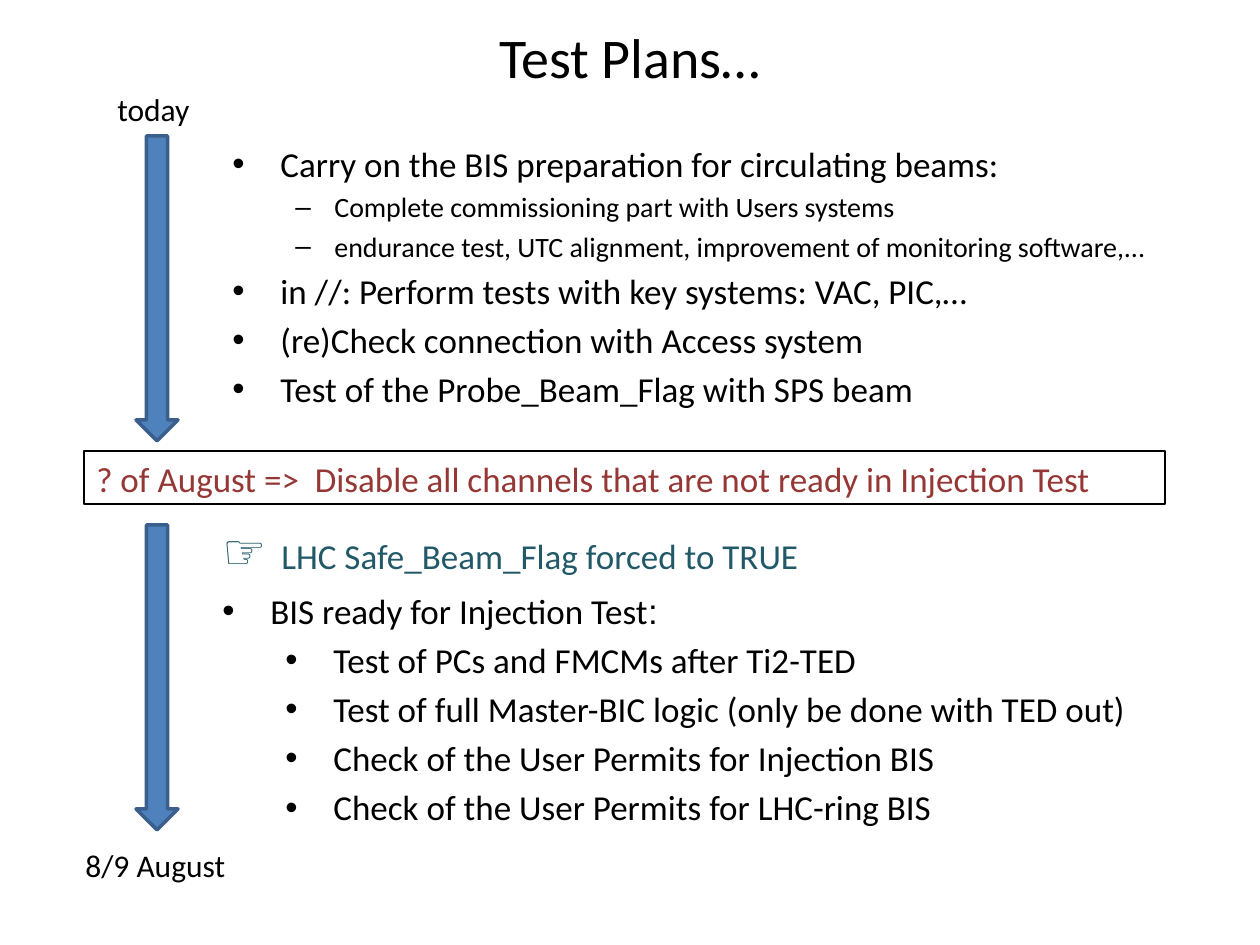
"""Build the Test Plans slide: a timeline of arrows beside two task lists."""
from dataclasses import dataclass

from lxml.etree import SubElement
from pptx import Presentation
from pptx.dml.color import RGBColor
from pptx.enum.shapes import MSO_SHAPE as Shape
from pptx.enum.text import MSO_ANCHOR as Anchor, PP_ALIGN as Align
from pptx.oxml.ns import qn
from pptx.util import Emu, Pt

COLORS = {
    "text": "000000", "arrow": "4F81BD", "arrow_edge": "3A5F8C",
    "border": "000000", "warning": "953735", "flag": "215968",
}


@dataclass(frozen=True)
class Run:
    text: str
    size: int = 20
    color: str = "text"
    font: str = "Calibri"


@dataclass(frozen=True)
class Para:
    runs: tuple[Run, ...]
    bullet: str = ""
    level: int = 0
    left: int = 0
    hang: int = 0
    before: float = 0
    spacing: float = 1.0
    align: Align = Align.LEFT


@dataclass(frozen=True)
class Block:
    box: tuple[int, int, int, int]
    paras: tuple[Para, ...]
    anchor: Anchor = Anchor.TOP
    border: str = ""


def px(v: int) -> Emu:
    """Turn pixels into EMU."""
    return Emu(round(v * 914400 / 126))


def rgb(name: str) -> RGBColor:
    """Look up a named colour."""
    return RGBColor.from_string(COLORS[name])


def label(text: str, size: int = 18, align: Align = Align.LEFT) -> Para:
    """Make a plain line."""
    return Para((Run(text, size),), align=align)


def hanging(*runs: Run, left: int = 48) -> Para:
    """Make an unbulleted line with a hanging indent."""
    return Para(runs, left=left, hang=left, before=runs[0].size / 5)


def item(*runs: Run, spacing: float = 1.0) -> Para:
    """Make a first-level bullet."""
    return Para(runs, "•", 0, 48, 48, 4, spacing)


def dash(text: str) -> Para:
    """Make a small dashed sub-item."""
    return Para((Run(text, 16),), "–", 1, 102, 39, 3.2)


def subitem(text: str) -> Para:
    """Make a second-level bullet."""
    return Para((Run(text),), "•", 1, 111, 48, 4)


def add_block(s, block: Block) -> None:
    """Draw a text block, framed if it has a border colour."""
    box = [px(v) for v in block.box]
    if block.border:
        sp = s.shapes.add_shape(Shape.RECTANGLE, *box)
        sp.shadow.inherit = False
        sp.fill.background()
        sp.line.color.rgb = rgb(block.border)
        sp.line.width = Pt(0.75)
    else:
        sp = s.shapes.add_textbox(*box)
    tf = sp.text_frame
    tf.word_wrap = True
    tf.vertical_anchor = block.anchor
    for i, para in enumerate(block.paras):
        p = tf.add_paragraph() if i else tf.paragraphs[0]
        p.alignment, p.level = para.align, para.level
        p.space_before, p.line_spacing = Pt(para.before), para.spacing
        pPr = p._p.get_or_add_pPr()
        pPr.set("marL", str(px(para.left)))
        pPr.set("indent", str(px(-para.hang)))
        if para.bullet:
            SubElement(pPr, qn("a:buFont"), typeface="Arial")
            SubElement(pPr, qn("a:buChar"), char=para.bullet)
        for run in para.runs:
            r = p.add_run()
            r.text = run.text
            r.font.size, r.font.name = Pt(run.size), run.font
            r.font.color.rgb = rgb(run.color)


def add_arrow(s, top: int) -> None:
    """Draw one timeline arrow."""
    sp = s.shapes.add_shape(Shape.DOWN_ARROW, px(136), px(top), px(42), px(305))
    sp.shadow.inherit = False
    sp.fill.solid()
    sp.fill.fore_color.rgb = rgb("arrow")
    sp.line.color.rgb = rgb("arrow_edge")
    sp.line.width = Pt(2)


BLOCKS = (
    Block((63, 28, 1134, 57), (label("Test Plans…", 32, Align.CENTER),), Anchor.MIDDLE),
    Block((220, 136, 977, 294), (
        item(Run("Carry on the BIS preparation for circulating beams:")),
        dash("Complete commissioning part with Users systems"),
        dash("endurance test, UTC alignment, improvement of monitoring software,..."),
        item(Run("in //: Perform tests with key systems: VAC, PIC,…")),
        item(Run("(re)Check connection with Access system")),
        item(Run("Test of the Probe_Beam_Flag with SPS beam")),
    )),
    Block((105, 84, 116, 53), (label("today"),)),
    Block((73, 840, 179, 50), (label("8/9 August"),)),
    Block((210, 588, 977, 252), (
        item(Run("BIS ready for Injection Test"), Run(":", font="Arial"), spacing=0.9),
        subitem("Test of PCs and FMCMs after Ti2-TED"),
        subitem("Test of full Master-BIC logic (only be done with TED out)"),
        subitem("Check of the User Permits for Injection BIS"),
        subitem("Check of the User Permits for LHC-ring BIS"),
    )),
    Block((84, 451, 1081, 53), (
        hanging(Run("? of August =>  Disable all channels that are not ready in Injection Test",
                    color="warning")),
    ), border="border"),
    Block((210, 514, 693, 63), (
        hanging(Run("☞", 28, "flag", "Arial"),
                Run("\tLHC Safe_Beam_Flag forced to TRUE", color="flag"), left=59),
    )),
)


def main() -> None:
    """Build and save the slide."""
    prs = Presentation()
    prs.slide_width, prs.slide_height = px(1260), px(945)
    s = prs.slides.add_slide(prs.slide_layouts[6])
    for top in (136, 525):
        add_arrow(s, top)
    for block in BLOCKS:
        add_block(s, block)
    prs.save("out.pptx")


if __name__ == "__main__":
    main()
